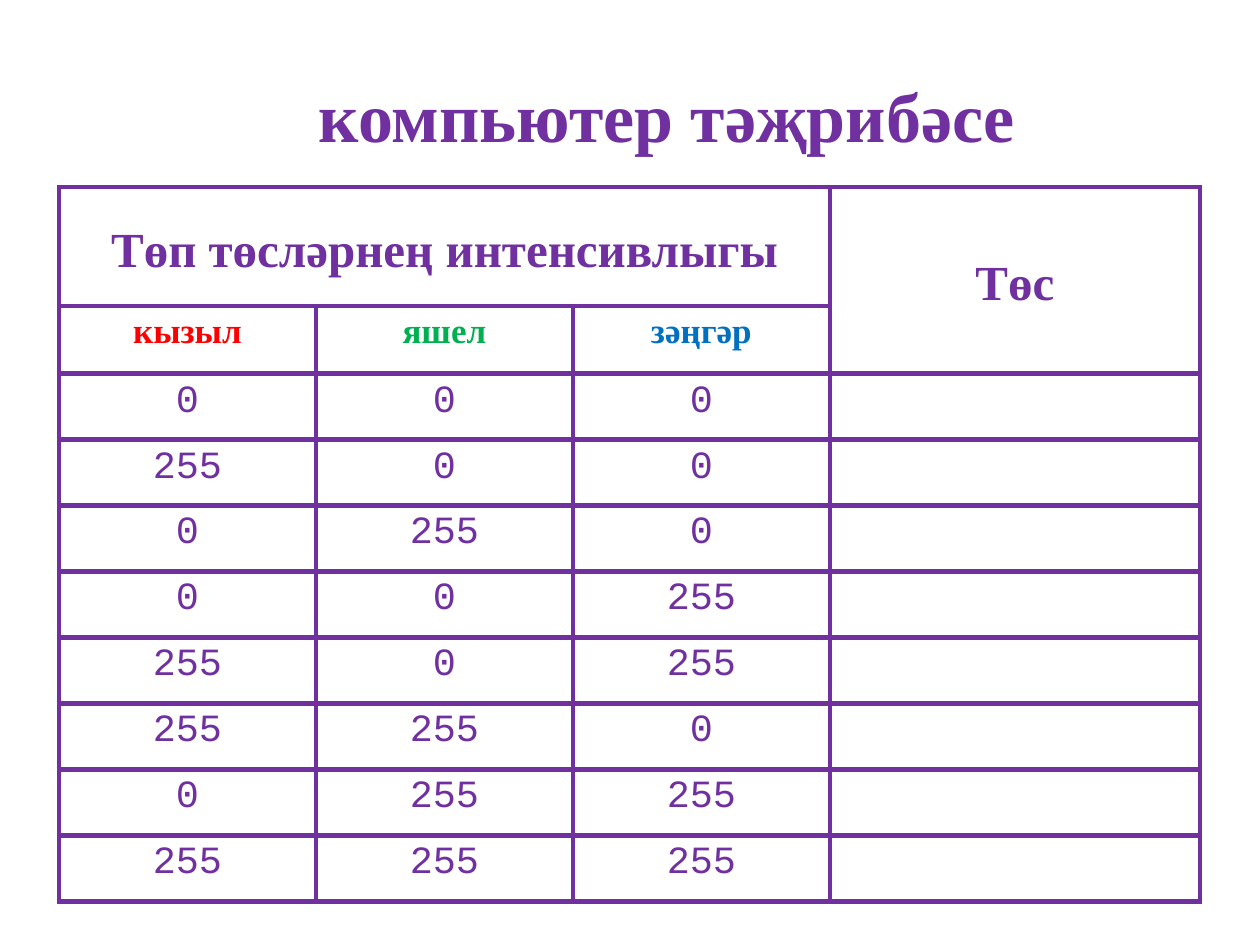
from dataclasses import dataclass

from lxml import etree
from pptx import Presentation
from pptx import util as u
from pptx.dml.color import RGBColor
from pptx.enum import text
from pptx.oxml import ns

EMU_PER_PX = 914400 / 126


@dataclass(frozen=True)
class Theme:
    purple: str = "7030A0"
    red: str = "FF0000"
    green: str = "00B050"
    blue: str = "0070C0"
    white: str = "FFFFFF"
    serif: str = "Times New Roman"
    mono: str = "Courier New"
    title_size: int = 40
    heading_size: int = 28
    channel_size: int = 20
    value_size: int = 22
    border_width: int = 3


THEME = Theme()
COLUMN_WIDTHS = [257, 257, 257, 370]
HEADER_HEIGHTS = [119, 62]
VALUE_ROW_HEIGHT = 66
CHANNELS = [("кызыл", THEME.red), ("яшел", THEME.green), ("зәңгәр", THEME.blue)]
INTENSITIES = [
    (0, 0, 0),
    (255, 0, 0),
    (0, 255, 0),
    (0, 0, 255),
    (255, 0, 255),
    (255, 255, 0),
    (0, 255, 255),
    (255, 255, 255),
]


def px(length):
    return u.Emu(round(length * EMU_PER_PX))


def write_text(frame, content, size, font=THEME.serif, color=THEME.purple,
               bold=True, line_spacing=None):
    paragraph = frame.paragraphs[0]
    paragraph.alignment = text.PP_ALIGN.CENTER
    paragraph.line_spacing = line_spacing
    run = paragraph.add_run()
    run.text = content
    run.font.name = font
    run.font.size = u.Pt(size)
    run.font.bold = bold
    run.font.color.rgb = RGBColor.from_string(color)


def add_title(slide, content):
    title = slide.shapes.title
    title.left, title.top, title.width, title.height = map(px, (74, 66, 1186, 97))
    frame = title.text_frame
    frame.word_wrap = True
    frame.auto_size = text.MSO_AUTO_SIZE.SHAPE_TO_FIT_TEXT
    frame.vertical_anchor = text.MSO_ANCHOR.MIDDLE
    write_text(frame, content, THEME.title_size)


def set_borders(cell):
    properties = cell._tc.get_or_add_tcPr()
    for side in ("a:lnL", "a:lnR", "a:lnT", "a:lnB"):
        line = etree.SubElement(properties, ns.qn(side), w=str(u.Pt(THEME.border_width)))
        fill = etree.SubElement(line, ns.qn("a:solidFill"))
        etree.SubElement(fill, ns.qn("a:srgbClr"), val=THEME.purple)


def format_cell(cell):
    set_borders(cell)
    cell.fill.background()
    cell.margin_left = cell.margin_right = px(9)
    cell.margin_top = cell.margin_bottom = 0


def write_cell(cell, content, size, **style):
    write_text(cell.text_frame, content, size, line_spacing=1.15, **style)


def add_heading(first, last, content):
    first.merge(last)
    first.vertical_anchor = text.MSO_ANCHOR.MIDDLE
    write_cell(first, content, THEME.heading_size)


def add_color_table(slide):
    heights = HEADER_HEIGHTS + [VALUE_ROW_HEIGHT] * len(INTENSITIES)
    frame = slide.shapes.add_table(
        len(heights), len(COLUMN_WIDTHS),
        px(59), px(187), px(sum(COLUMN_WIDTHS)), px(sum(heights)))
    table = frame.table
    table.first_row = table.horz_banding = False
    for column, width in zip(table.columns, COLUMN_WIDTHS):
        column.width = px(width)
    for row, height in zip(table.rows, heights):
        row.height = px(height)
    for cell in table.iter_cells():
        format_cell(cell)

    add_heading(table.cell(0, 0), table.cell(0, 2), "Төп төсләрнең интенсивлыгы")
    add_heading(table.cell(0, 3), table.cell(1, 3), "Төc")
    for column, (name, color) in enumerate(CHANNELS):
        write_cell(table.cell(1, column), name, THEME.channel_size, color=color)
    for row, values in enumerate(INTENSITIES, start=len(HEADER_HEIGHTS)):
        for column, value in enumerate(values):
            write_cell(table.cell(row, column), str(value), THEME.value_size,
                       font=THEME.mono, bold=False)
        sample = table.cell(row, len(values))
        sample.fill.solid()
        sample.fill.fore_color.rgb = RGBColor.from_string(THEME.white)


def main():
    presentation = Presentation()
    presentation.slide_width = px(1260)
    presentation.slide_height = px(945)
    slide = presentation.slides.add_slide(presentation.slide_layouts[5])
    add_title(slide, "компьютер тәҗрибәсе")
    add_color_table(slide)
    presentation.save("out.pptx")


if __name__ == "__main__":
    main()
